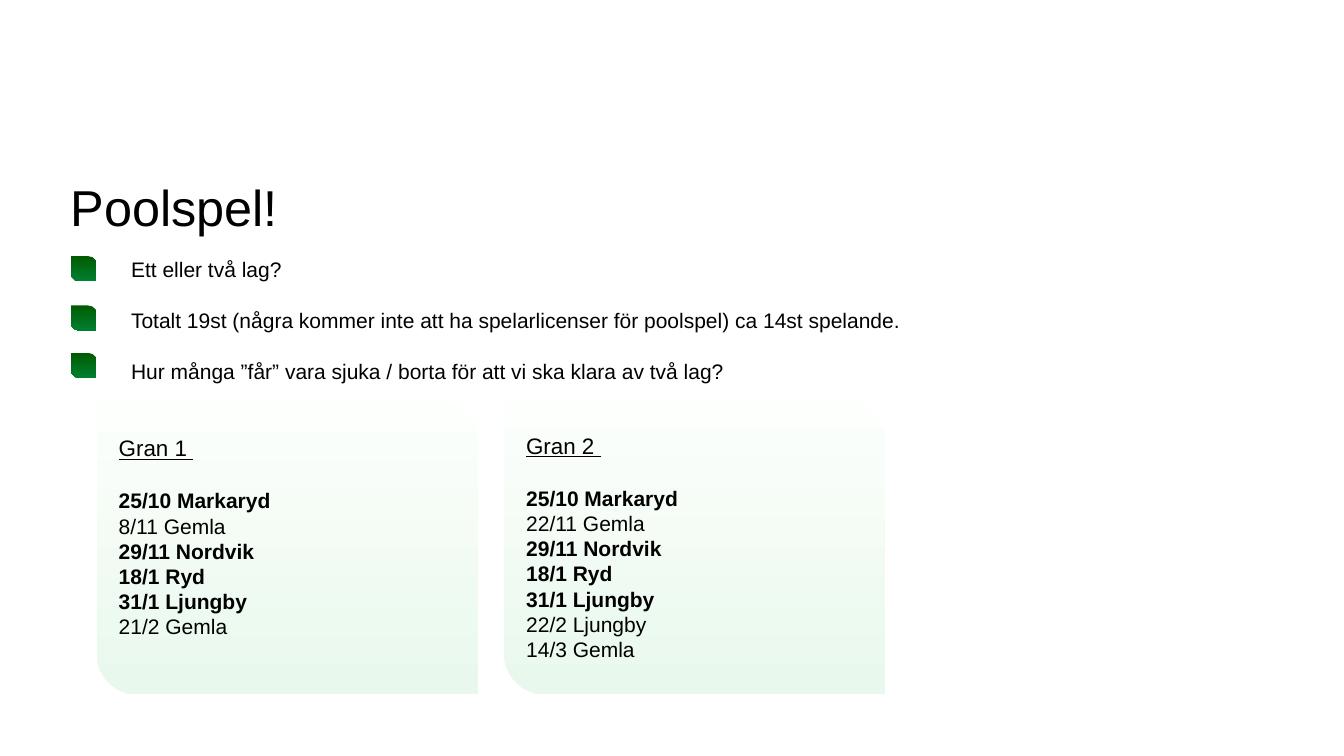
import pptx
import pptx.util
import pptx.dml.color
import pptx.enum.shapes
import pptx.enum.text

Inches = pptx.util.Inches
Pt = pptx.util.Pt
ANCHOR = pptx.enum.text.MSO_ANCHOR

COLORS = {
    "text": "000000",
    "marker_top": "005A00",
    "marker_bottom": "008031",
    "card_top": "FCFFFC",
    "card_bottom": "E9F8ED",
}

QUESTIONS = [
    "Ett eller två lag?",
    "Totalt 19st (några kommer inte att ha spelarlicenser för poolspel) ca 14st spelande.",
    "Hur många ”får” vara sjuka / borta för att vi ska klara av två lag?",
]
MARKER_TOPS = [2.54, 3.03, 3.5]

# Team name, box, bottom inset, matches as (text, bold)
TEAMS = [
    ("Gran 1 ", (0.96, 3.98, 3.78, 2.91), 0.32, [
        ("25/10 Markaryd", True), ("8/11 Gemla", False),
        ("29/11 Nordvik", True), ("18/1 Ryd", True),
        ("31/1 Ljungby", True), ("21/2 Gemla", False)]),
    ("Gran 2 ", (5, 3.96, 3.78, 2.93), 0.1, [
        ("25/10 Markaryd", True), ("22/11 Gemla", False),
        ("29/11 Nordvik", True), ("18/1 Ryd", True),
        ("31/1 Ljungby", True), ("22/2 Ljungby", False),
        ("14/3 Gemla", False)]),
]


def rgb(name):
    return pptx.dml.color.RGBColor.from_string(COLORS[name])


def format_frame(frame, anchor, insets):
    values = {"word_wrap": True, "vertical_anchor": anchor,
              "auto_size": pptx.enum.text.MSO_AUTO_SIZE.NONE}
    for side, inset in zip(("left", "top", "right", "bottom"), insets):
        values["margin_" + side] = Inches(inset)
    for name, value in values.items():
        setattr(frame, name, value)


def write_paragraph(frame, text, size, first=False, space=0, **styles):
    paragraph = frame.paragraphs[0] if first else frame.add_paragraph()
    paragraph.alignment = pptx.enum.text.PP_ALIGN.LEFT
    paragraph.space_before = Pt(space)
    run = paragraph.add_run()
    run.text = text
    values = {"name": "Arial", "size": Pt(size), "bold": False, **styles}
    for name, value in values.items():
        setattr(run.font, name, value)
    run.font.color.rgb = rgb("text")


def add_leaf(slide, box, rounding, kind):
    """Shape with two rounded corners and a top-to-bottom gradient."""
    shape = slide.shapes.add_shape(
        pptx.enum.shapes.MSO_SHAPE.ROUND_2_DIAG_RECTANGLE, *map(Inches, box))
    shape.adjustments[0] = 0
    shape.adjustments[1] = rounding
    shape.shadow.inherit = False
    shape.line.fill.background()
    shape.fill.gradient()
    shape.fill.gradient_angle = 270
    for stop, end in zip(shape.fill.gradient_stops, ("top", "bottom")):
        stop.color.rgb = rgb(f"{kind}_{end}")
    return shape


def add_title(slide, box):
    title = slide.shapes.title
    title.left, title.top, title.width, title.height = map(Inches, box)
    format_frame(title.text_frame, ANCHOR.TOP, (0, 0, 0, 0))
    write_paragraph(title.text_frame, "Poolspel!", 36, first=True)


def add_questions(slide, box):
    left, top, width, height = box
    indent = 0.6
    for marker_top in MARKER_TOPS:
        add_leaf(slide, (left, marker_top, 0.26, 0.25), 0.35, "marker")
    text_box = slide.shapes.add_textbox(
        *map(Inches, (left + indent, top, width - indent, height)))
    format_frame(text_box.text_frame, ANCHOR.TOP, (0, 0, 0, 0))
    for index, question in enumerate(QUESTIONS):
        write_paragraph(text_box.text_frame, question, 15,
                        first=index == 0, space=18.75 if index else 0)


def add_team(slide, name, box, bottom_inset, matches):
    frame = add_leaf(slide, box, 0.14, "card").text_frame
    format_frame(frame, ANCHOR.MIDDLE, (0.1, 0.1, 0.1, bottom_inset))
    write_paragraph(frame, name, 16, first=True, underline=True)
    for index, (match, bold) in enumerate(matches):
        write_paragraph(frame, match, 15, space=0 if index else 19, bold=bold)


def main():
    presentation = pptx.Presentation()
    presentation.slide_width = Inches(13.33)
    presentation.slide_height = Inches(7.5)
    slide = presentation.slides.add_slide(presentation.slide_layouts[5])
    add_title(slide, (0.7, 1.75, 8.39, 0.6))
    add_questions(slide, (0.7, 2.54, 8.39, 1.3))
    for team in TEAMS:
        add_team(slide, *team)
    presentation.save("out.pptx")


if __name__ == "__main__":
    main()
